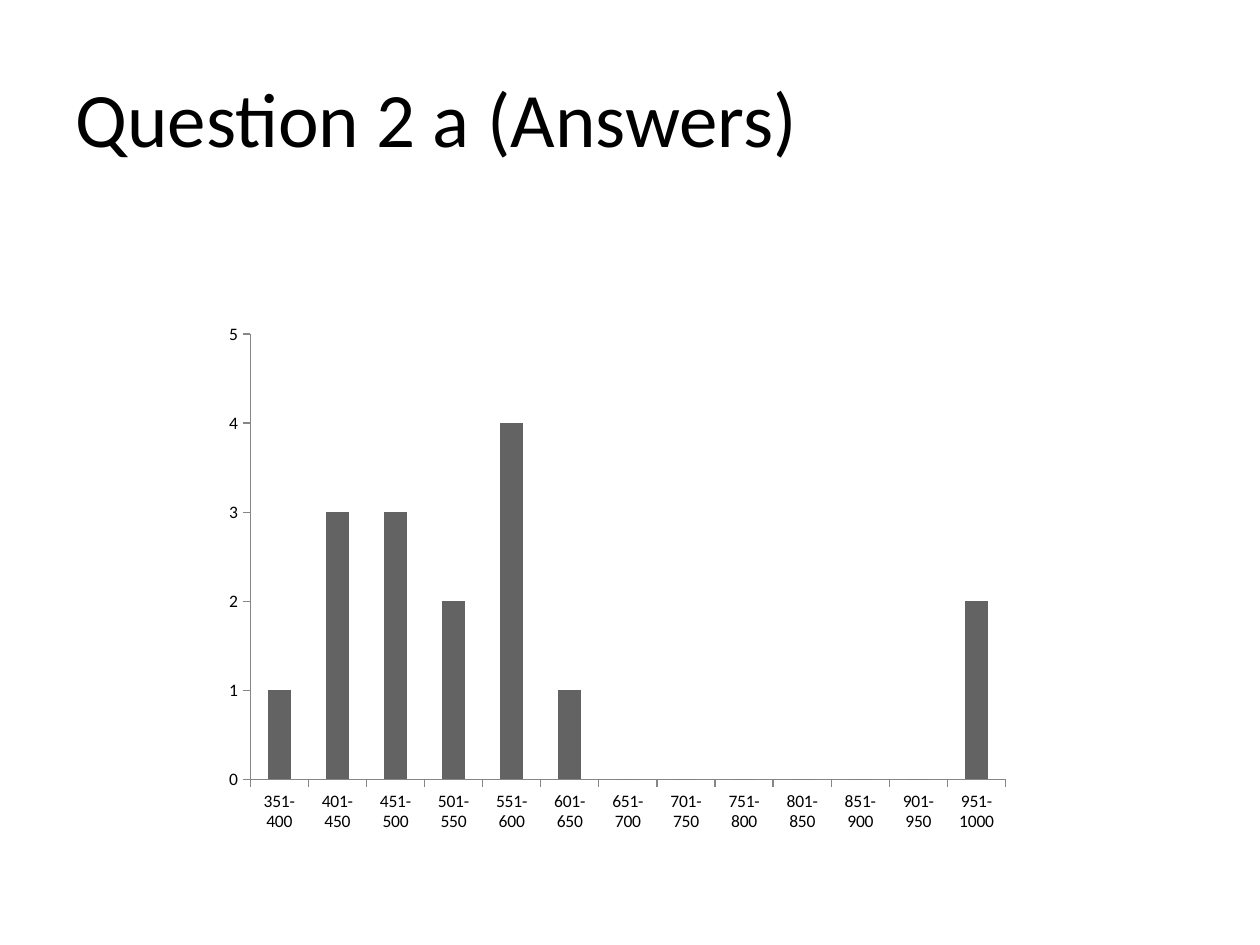
from pptx import Presentation
from pptx.chart.data import CategoryChartData
from pptx.dml.color import RGBColor
from pptx.enum.chart import XL_CHART_TYPE, XL_TICK_MARK
from pptx.enum.text import MSO_ANCHOR, PP_ALIGN
from pptx.util import Pt

COLORS = {"text": "000000", "bar": "636363", "axis": "868686", "background": "FFFFFF"}
FREQUENCIES = [1, 3, 3, 2, 4, 1, 0, 0, 0, 0, 0, 0, 2]
FIRST_BOUND, BIN_WIDTH = 351, 50


def color(name):
    return RGBColor.from_string(COLORS[name])


def write_text(frame, text, font="Calibri", size=18, fill="text", align=PP_ALIGN.LEFT):
    paragraph = frame.paragraphs[0]
    paragraph.alignment = align
    run = paragraph.add_run()
    run.text = text
    run.font.name = font
    run.font.size = Pt(size)
    run.font.color.rgb = color(fill)


class SlideBuilder:
    font = "Calibri"

    def __init__(self, presentation):
        self.slide = presentation.slides.add_slide(presentation.slide_layouts[5])
        self.slide.background.fill.solid()
        self.slide.background.fill.fore_color.rgb = color("background")

    def title(self, text, left, top, width, height):
        shape = self.slide.shapes.title
        shape.left, shape.top = Pt(left), Pt(top)
        shape.width, shape.height = Pt(width), Pt(height)
        shape.text_frame.vertical_anchor = MSO_ANCHOR.MIDDLE
        write_text(shape.text_frame, text, font=self.font, size=44)

    def histogram(self, categories, values, left, top, width, height):
        data = CategoryChartData()
        data.categories = categories
        data.add_series("Series 1", values)
        chart = self.slide.shapes.add_chart(
            XL_CHART_TYPE.COLUMN_CLUSTERED,
            Pt(left), Pt(top), Pt(width), Pt(height), data,
        ).chart
        chart.has_legend = False
        chart.has_title = False
        chart.font.name = self.font
        chart.font.size = Pt(10)
        chart.font.color.rgb = color("text")

        # Bars
        plot = chart.plots[0]
        plot.gap_width = 150
        plot.vary_by_categories = False
        bar_fill = plot.series[0].format.fill
        bar_fill.solid()
        bar_fill.fore_color.rgb = color("bar")

        # Axes
        for axis in (chart.category_axis, chart.value_axis):
            axis.has_major_gridlines = False
            axis.major_tick_mark = XL_TICK_MARK.OUTSIDE
            axis.minor_tick_mark = XL_TICK_MARK.NONE
            axis.format.line.color.rgb = color("axis")
            axis.format.line.width = Pt(0.75)
        chart.value_axis.minimum_scale = 0
        chart.value_axis.maximum_scale = 5
        chart.value_axis.major_unit = 1


def main():
    presentation = Presentation()
    presentation.slide_width, presentation.slide_height = Pt(720), Pt(540)
    builder = SlideBuilder(presentation)

    # Score ranges of equal width
    starts = [FIRST_BOUND + BIN_WIDTH * index for index in range(len(FREQUENCIES))]
    ranges = [f"{start}-{start + BIN_WIDTH - 1}" for start in starts]
    builder.histogram(ranges, FREQUENCIES, 121.7, 179.3, 462.2, 301.7)

    # Heading
    builder.title("Question 2 a (Answers)", 36, 21.6, 648, 90)

    presentation.save("out.pptx")


if __name__ == "__main__":
    main()
